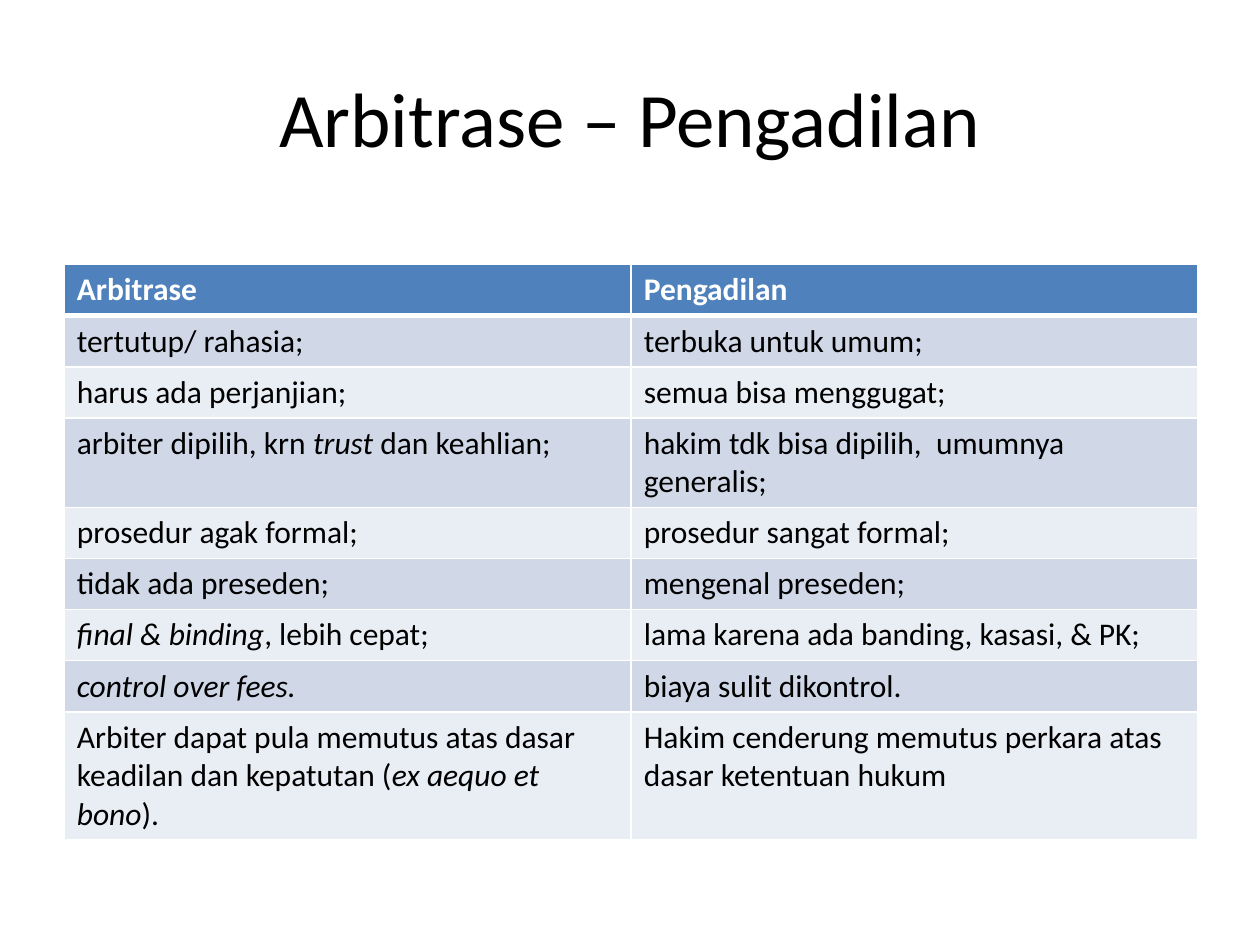
from lxml.etree import SubElement
from pptx import Presentation
from pptx.dml.color import RGBColor
from pptx.enum.text import MSO_ANCHOR, PP_ALIGN
from pptx.oxml.ns import qn
from pptx.util import Inches, Pt

BLACK = RGBColor(0x00, 0x00, 0x00)
WHITE = RGBColor(0xFF, 0xFF, 0xFF)
HEADER_BLUE = RGBColor(0x4F, 0x81, 0xBD)
BANDS = (RGBColor(0xD0, 0xD8, 0xE8), RGBColor(0xE9, 0xED, 0xF4))
FONT = "Calibri"

TITLE = "Arbitrase – Pengadilan"
HEADERS = ("Arbitrase", "Pengadilan")
# A cell is a list of pieces; every second piece is italic.
COMPARISON = [
    (["tertutup/ rahasia;"], ["terbuka untuk umum;"]),
    (["harus ada perjanjian;"], ["semua bisa menggugat;"]),
    (["arbiter dipilih, krn ", "trust", " dan keahlian;"],
     ["hakim tdk bisa dipilih,\N{NO-BREAK SPACE} umumnya generalis;"]),
    (["prosedur agak formal;"], ["prosedur sangat formal;"]),
    (["tidak ada preseden;"], ["mengenal preseden;"]),
    (["", "final & binding", ", lebih cepat;"],
     ["lama karena ada banding, kasasi, & PK;"]),
    (["", "control over fees."], ["biaya sulit dikontrol."]),
    (["Arbiter dapat pula memutus atas dasar keadilan dan kepatutan (",
      "ex aequo et bono", ")."],
     ["Hakim cenderung memutus perkara atas dasar ketentuan hukum"]),
]

SLIDE_WIDTH, SLIDE_HEIGHT = Inches(10), Inches(7.5)
CONTENT_WIDTH = Inches(9)
ROW_HEIGHT = Inches(0.4)


def write(text_frame, pieces, size=18, color=BLACK, bold=False,
          align=PP_ALIGN.LEFT):
    """Write pieces as runs of one paragraph, every second one italic."""
    paragraph = text_frame.paragraphs[0]
    paragraph.alignment = align
    for index, piece in enumerate(pieces):
        if not piece:
            continue
        run = paragraph.add_run()
        run.text = piece
        font = run.font
        font.name, font.size, font.bold = FONT, Pt(size), bold
        font.italic = index % 2 == 1
        font.color.rgb = color


def set_borders(cell, bottom=1):
    properties = cell._tc.get_or_add_tcPr()
    for side, width in (("L", 1), ("R", 1), ("T", 1), ("B", bottom)):
        line = SubElement(properties, qn(f"a:ln{side}"), w=str(Pt(width)))
        fill = SubElement(line, qn("a:solidFill"))
        SubElement(fill, qn("a:srgbClr"), val=str(WHITE))


def fill_cell(cell, pieces, fill, bottom=1, **text_format):
    set_borders(cell, bottom)
    cell.fill.solid()
    cell.fill.fore_color.rgb = fill
    write(cell.text_frame, pieces, **text_format)


def add_title(slide):
    title = slide.shapes.title
    title.left, title.top = Inches(0.5), Inches(0.3)
    title.width, title.height = CONTENT_WIDTH, Inches(1.25)
    title.text_frame.vertical_anchor = MSO_ANCHOR.MIDDLE
    write(title.text_frame, [TITLE], size=44, align=PP_ALIGN.CENTER)


def add_comparison(slide):
    row_count = len(COMPARISON) + 1
    table = slide.shapes.add_table(
        row_count, len(HEADERS), Inches(0.51), Inches(2.1),
        CONTENT_WIDTH, ROW_HEIGHT * row_count).table
    for column, header in enumerate(HEADERS):
        fill_cell(table.cell(0, column), [header], HEADER_BLUE,
                  bottom=3, color=WHITE, bold=True)
    for row, entries in enumerate(COMPARISON, start=1):
        for column, pieces in enumerate(entries):
            fill_cell(table.cell(row, column), pieces, BANDS[(row - 1) % 2])


def main():
    presentation = Presentation()
    presentation.slide_width = SLIDE_WIDTH
    presentation.slide_height = SLIDE_HEIGHT
    slide = presentation.slides.add_slide(presentation.slide_layouts[5])
    add_title(slide)
    add_comparison(slide)
    presentation.save("out.pptx")


if __name__ == "__main__":
    main()
